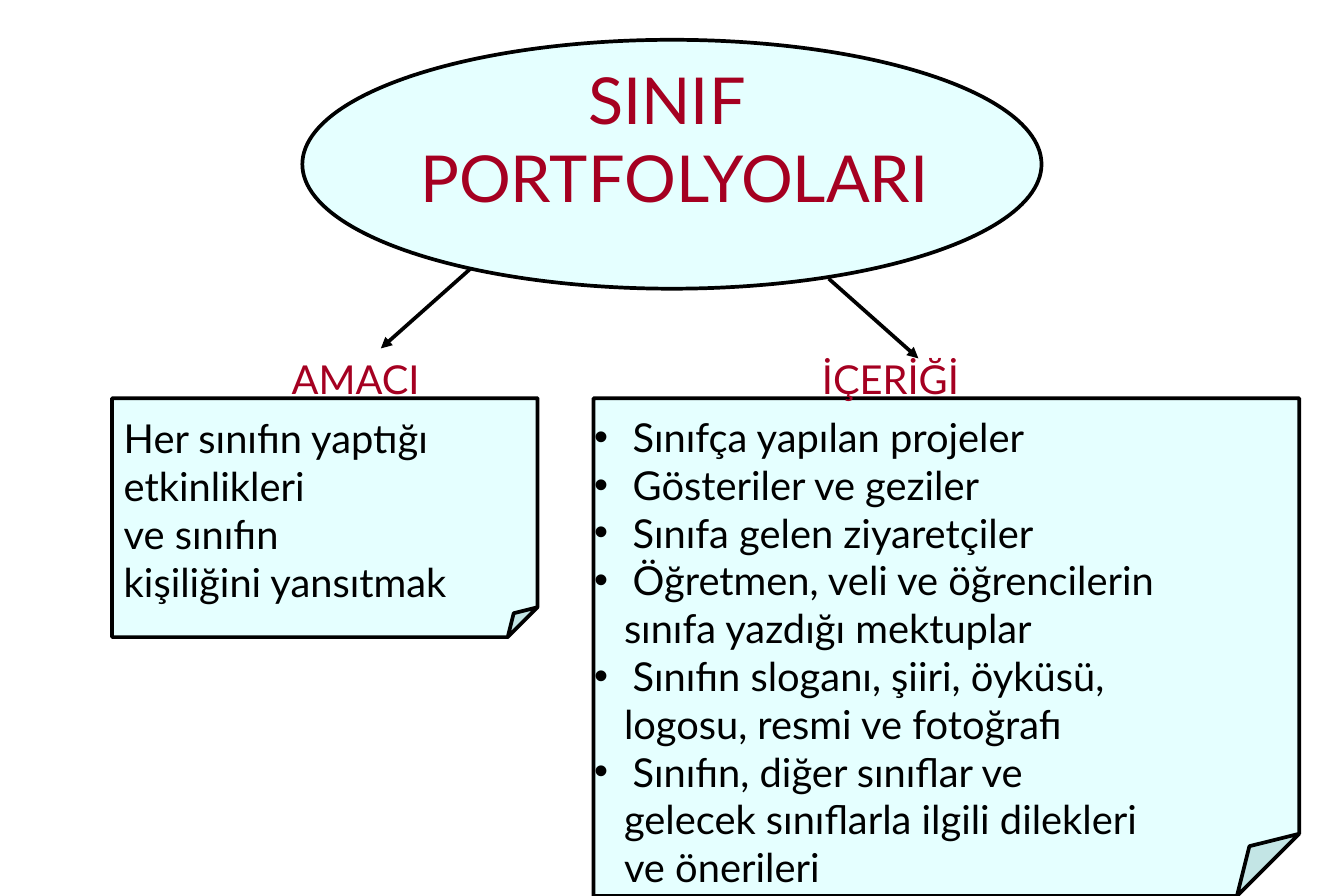
from dataclasses import dataclass

from lxml.etree import SubElement
from pptx import Presentation
from pptx.dml.color import RGBColor
from pptx.enum.shapes import MSO_CONNECTOR, MSO_SHAPE
from pptx.enum.text import MSO_ANCHOR, MSO_AUTO_SIZE, PP_ALIGN
from pptx.oxml.ns import qn
from pptx.slide import Slide
from pptx.text.text import TextFrame
from pptx.util import Pt

EMU_PER_PX = 9525  # 96 px to the inch


@dataclass(frozen=True)
class Theme:
    font: str = "Lato"
    panel: RGBColor = RGBColor(0xCC, 0xFF, 0xFF)
    panel_alpha: int = 50000
    outline: RGBColor = RGBColor(0, 0, 0)
    body: RGBColor = RGBColor(0, 0, 0)
    heading: RGBColor = RGBColor(0xA5, 0x00, 0x21)
    title_size: int = 39
    text_size: int = 24
    line_width: float = 2.25


@dataclass(frozen=True)
class Box:
    left: int
    top: int
    width: int
    height: int

    def emu(self) -> list[int]:
        return [px(value) for value in (self.left, self.top, self.width, self.height)]


@dataclass(frozen=True)
class Panel:
    kind: MSO_SHAPE
    box: Box
    fold: int = 0  # folded corner, in 1/100000 of the shorter side


@dataclass(frozen=True)
class Line:
    text: str
    indent: int = 0
    bullet: bool = False


@dataclass(frozen=True)
class Label:
    box: Box
    color: RGBColor
    lines: tuple[Line, ...]


@dataclass(frozen=True)
class Arrow:
    start: tuple[int, int]
    end: tuple[int, int]


def px(value: int) -> int:
    return value * EMU_PER_PX


def item(text: str) -> Line:
    return Line(text, indent=31, bullet=True)


def continued(text: str) -> Line:
    return Line(text, indent=24)


THEME = Theme()
TITLE = "SINIF \vPORTFOLYOLARI"
TITLE_BOX = Box(56, 58, 972, 120)

PANELS = (
    Panel(MSO_SHAPE.FOLDED_CORNER, Box(477, 320, 567, 400), 12500),
    Panel(MSO_SHAPE.FOLDED_CORNER, Box(90, 320, 342, 192), 12500),
    Panel(MSO_SHAPE.OVAL, Box(243, 32, 594, 200)),
)

LABELS = (
    Label(Box(225, 280, 153, 48), THEME.heading, (Line("AMACI"),)),
    Label(Box(651, 280, 151, 48), THEME.heading, (Line("İÇERİĞİ"),)),
    Label(Box(90, 328, 317, 163), THEME.body, (
        Line("Her sınıfın yaptığı"),
        Line("etkinlikleri"),
        Line("ve sınıfın"),
        Line("kişiliğini yansıtmak"),
    )),
    Label(Box(468, 327, 567, 393), THEME.body, (
        item("Sınıfça yapılan projeler"),
        item("Gösteriler ve geziler"),
        item("Sınıfa gelen ziyaretçiler"),
        item("Öğretmen, veli ve öğrencilerin"),
        continued("sınıfa yazdığı mektuplar"),
        item("Sınıfın sloganı, şiiri, öyküsü,"),
        continued("logosu, resmi ve fotoğrafı"),
        item("Sınıfın, diğer sınıflar ve"),
        continued("gelecek sınıflarla ilgili dilekleri"),
        continued("ve önerileri"),
    )),
)

ARROWS = (
    Arrow((666, 224), (738, 288)),
    Arrow((378, 216), (306, 280)),
)


def format_text(frame: TextFrame, size: int, color: RGBColor) -> None:
    font_format = {"name": THEME.font, "size": Pt(size), "bold": False}
    for paragraph in frame.paragraphs:
        for run in paragraph.runs:
            for name, value in font_format.items():
                setattr(run.font, name, value)
            run.font.color.rgb = color


def draw_panel(slide: Slide, panel: Panel) -> None:
    shape = slide.shapes.add_shape(panel.kind, *panel.box.emu())
    shape.shadow.inherit = False
    properties = shape.element.spPr
    if panel.fold:
        guides = properties.find(qn("a:prstGeom")).find(qn("a:avLst"))
        SubElement(guides, qn("a:gd"), name="adj", fmla=f"val {panel.fold}")
    shape.fill.solid()
    shape.fill.fore_color.rgb = THEME.panel
    fill_color = properties.find(qn("a:solidFill")).find(qn("a:srgbClr"))
    SubElement(fill_color, qn("a:alpha"), val=str(THEME.panel_alpha))
    shape.line.color.rgb = THEME.outline
    shape.line.width = Pt(THEME.line_width)


def draw_title(slide: Slide) -> None:
    """Fill the title placeholder and bring it in front of the panels."""
    title = slide.shapes.title
    title.left, title.top, title.width, title.height = TITLE_BOX.emu()
    frame = title.text_frame
    frame.text = TITLE
    frame_format = {
        "auto_size": MSO_AUTO_SIZE.NONE,
        "vertical_anchor": MSO_ANCHOR.BOTTOM,
        "word_wrap": True,
    }
    for name, value in frame_format.items():
        setattr(frame, name, value)
    frame.paragraphs[0].alignment = PP_ALIGN.CENTER
    format_text(frame, THEME.title_size, THEME.heading)
    title.element.getparent().append(title.element)


def draw_label(slide: Slide, label: Label) -> None:
    frame = slide.shapes.add_textbox(*label.box.emu()).text_frame
    frame.word_wrap = True
    for index, line in enumerate(label.lines):
        paragraph = frame.add_paragraph() if index else frame.paragraphs[0]
        paragraph.add_run().text = line.text
        if line.indent:
            properties = paragraph._p.get_or_add_pPr()
            properties.set("marL", str(px(line.indent)))
            properties.set("indent", str(-px(line.indent) if line.bullet else 0))
            if line.bullet:
                SubElement(properties, qn("a:buFont"), typeface="Arial")
                SubElement(properties, qn("a:buChar"), char="•")
    format_text(frame, THEME.text_size, label.color)


def draw_arrow(slide: Slide, arrow: Arrow) -> None:
    ends = [px(value) for value in (*arrow.start, *arrow.end)]
    connector = slide.shapes.add_connector(MSO_CONNECTOR.STRAIGHT, *ends)
    connector.line.color.rgb = THEME.outline
    connector.line.width = Pt(THEME.line_width)
    properties = connector.element.spPr
    SubElement(properties.find(qn("a:ln")), qn("a:tailEnd"), type="triangle")
    SubElement(properties, qn("a:effectLst"))


def main() -> None:
    presentation = Presentation()
    presentation.slide_width, presentation.slide_height = px(1080), px(720)
    slide = presentation.slides.add_slide(presentation.slide_layouts[5])
    for panel in PANELS:
        draw_panel(slide, panel)
    draw_title(slide)
    for label in LABELS:
        draw_label(slide, label)
    for arrow in ARROWS:
        draw_arrow(slide, arrow)
    presentation.save("out.pptx")


if __name__ == "__main__":
    main()
